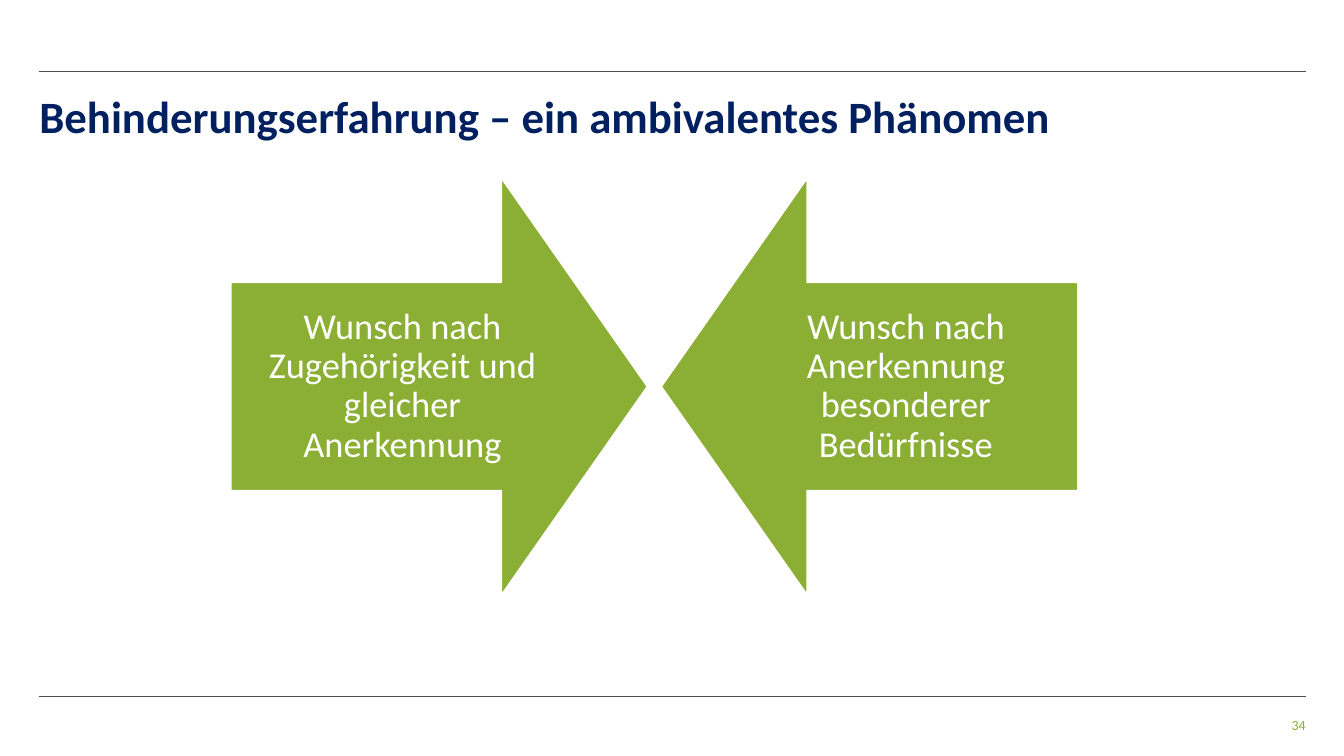
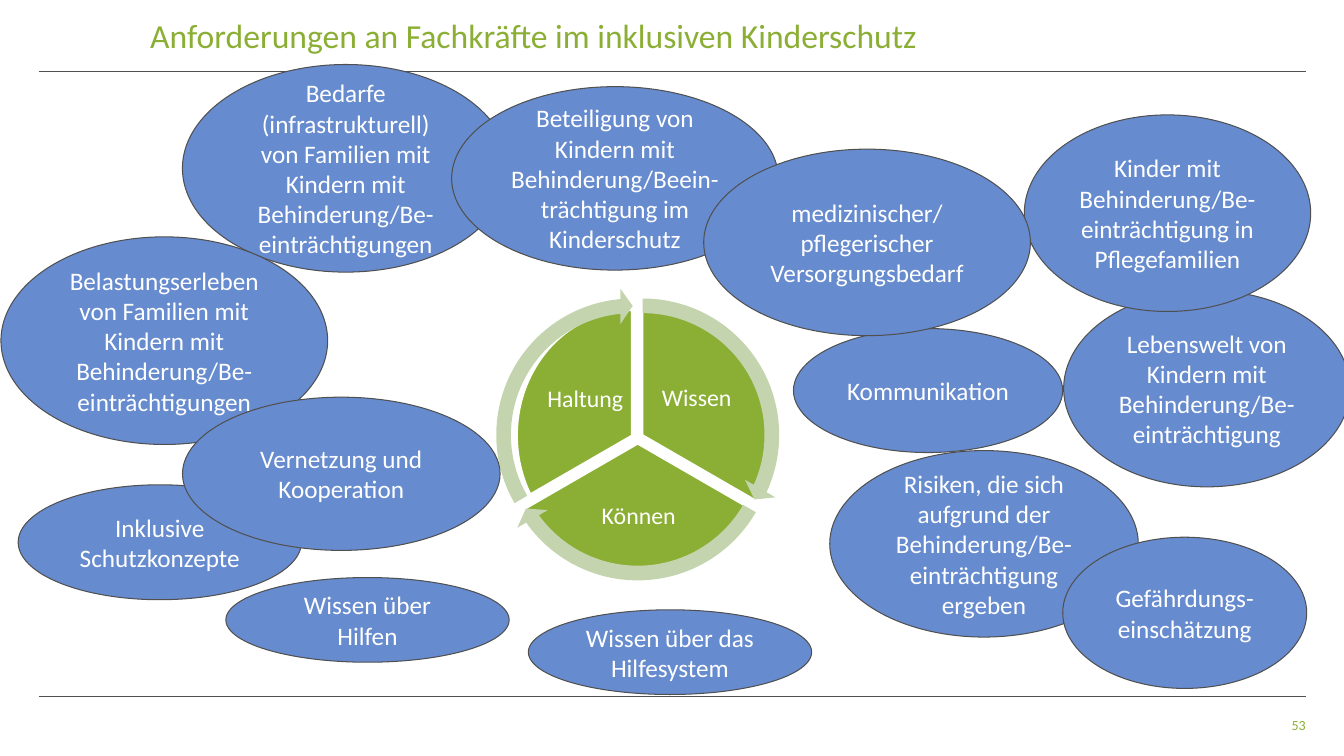
from lxml import etree
from pptx import Presentation
from pptx.dml.color import RGBColor
from pptx.enum.shapes import MSO_CONNECTOR, MSO_SHAPE
from pptx.enum.text import MSO_ANCHOR, PP_ALIGN
from pptx.oxml.ns import qn
from pptx.util import Inches, Pt

STRAIGHT = MSO_CONNECTOR.STRAIGHT
OVAL, PIE, RING_ARROW = MSO_SHAPE.OVAL, MSO_SHAPE.PIE, MSO_SHAPE.CIRCULAR_ARROW
RIGHT_ARROW, LEFT_ARROW = MSO_SHAPE.RIGHT_ARROW, MSO_SHAPE.LEFT_ARROW
MIDDLE, BOTTOM = MSO_ANCHOR.MIDDLE, MSO_ANCHOR.BOTTOM
LEFT, CENTER, RIGHT = PP_ALIGN.LEFT, PP_ALIGN.CENTER, PP_ALIGN.RIGHT

GREEN, PALE_GREEN, BLUE = "8BAF35", "C4D4AE", "668BCE"
NAVY, GREY, WHITE = "002060", "505050", "FFFFFF"
MARGIN, CONTENT_W = 0.39, 12.56


def rgb(value):
    return RGBColor.from_string(value)


class Deck:
    """Holds the shared style and the current slide."""

    font = "Calibri"

    def __init__(self):
        self.prs = Presentation()
        self.prs.slide_width, self.prs.slide_height = Inches(13.33), Inches(7.5)

    def slide(self, number):
        self.s = self.prs.slides.add_slide(self.prs.slide_layouts[6])
        for y in (0.71, 6.91):
            self.rule(y)
        self.text((11.97, 7.13, 0.98, 0.15), number, 10, GREEN, align=RIGHT, anchor=BOTTOM)

    def rule(self, y):
        x1, x2, y = Inches(MARGIN), Inches(MARGIN + CONTENT_W), Inches(y)
        line = self.s.shapes.add_connector(STRAIGHT, x1, y, x2, y)
        line.line.color.rgb, line.line.width = rgb(GREY), Pt(0.5)
        etree.SubElement(line._element.spPr, qn("a:effectLst"))

    def title(self, box, text, size, color, bold=False):
        self.text(box, text, size, color, bold=bold)

    def text(self, box, text, size, color, **options):
        sp = self.s.shapes.add_textbox(*map(Inches, box))
        self.fill_text(sp, text, size, color, **options)

    def shape(self, kind, box, fill, line=None, width=1, adjust=()):
        sp = self.s.shapes.add_shape(kind, *map(Inches, box))
        sp.shadow.inherit = False
        sp.fill.solid()
        sp.fill.fore_color.rgb = rgb(fill)
        if line:
            sp.line.color.rgb, sp.line.width = rgb(line), Pt(width)
        else:
            sp.line.fill.background()
        for i, value in enumerate(adjust):
            sp.adjustments[i] = value
        return sp

    def bubble(self, box, text):
        sp = self.shape(OVAL, box, BLUE, GREY, 0.75)
        self.fill_text(sp, text, 18, WHITE, align=CENTER, inset=(0.1, 0.05), spacing=1)

    def fill_text(self, sp, text, size, color, bold=False, align=LEFT, anchor=MIDDLE,
                  inset=(0, 0), spacing=0.9):
        tf = sp.text_frame
        dx, dy = map(Inches, inset)
        frame = {"word_wrap": True, "vertical_anchor": anchor, "margin_left": dx,
                 "margin_right": dx, "margin_top": dy, "margin_bottom": dy}
        for name, value in frame.items():
            setattr(tf, name, value)
        p = tf.paragraphs[0]
        p.text, p.alignment, p.line_spacing = text, align, spacing
        for r in p.runs:
            for name, value in {"name": self.font, "size": Pt(size), "bold": bold}.items():
                setattr(r.font, name, value)
            r.font.color.rgb = rgb(color)


def ambivalence(deck):
    deck.slide("34")
    deck.title((MARGIN, 0.82, CONTENT_W, 0.73),
               "Behinderungserfahrung – ein ambivalentes Phänomen", 32, NAVY, bold=True)

    # Two arrows meeting in the middle
    side = 4.13
    for kind, x, text in (
        (RIGHT_ARROW, 2.29, "Wunsch nach Zugehörigkeit und gleicher Anerkennung"),
        (LEFT_ARROW, 6.56, "Wunsch nach Anerkennung besonderer Bedürfnisse"),
    ):
        sp = deck.shape(kind, (x, 1.77, side, side), GREEN, WHITE, adjust=(0.5, 0.35))
        deck.fill_text(sp, text, 26, WHITE, align=CENTER, inset=(0.2, 0.2))


def requirements(deck):
    deck.slide("53")
    deck.title((1.49, 0.19, 7.85, 0.36),
               "Anforderungen an Fachkräfte im inklusiven Kinderschutz", 24, GREEN)

    # Cycle: three sectors with labels, then the arrows around them
    for box, angles, label_box, label in (
        ((5.08, 3.02, 2.59, 2.59), (162, 18), (6.45, 3.57, 0.92, 0.77), "Wissen"),
        ((5.03, 3.11, 2.59, 2.59), (18, 90), (5.64, 4.79, 1.39, 0.68), "Können"),
        ((5.13, 3.08, 2.27, 2.48), (90, 162), (5.4, 3.6, 0.81, 0.74), "Haltung"),
    ):
        deck.shape(PIE, box, GREEN, WHITE, adjust=angles)
        deck.text(label_box, label, 17, WHITE, align=CENTER, inset=(0.02, 0.02))
    ring = 2.91
    for x, y, end, start in ((4.92, 2.86, 14.73, 162), (4.87, 2.95, 86.72, 18),
                             (4.82, 2.86, 158.73, 90)):
        deck.shape(RING_ARROW, (x, y, ring, ring), PALE_GREEN,
                   adjust=(0.05, 3.28, end, start, 0.06))

    # Topic bubbles, from back to front
    for box, text in (
        ((10.55, 2.88, 2.84, 1.95), "Lebenswelt von Kindern mit Behinderung/Be-einträchtigung"),
        ((1.81, 0.64, 3.24, 2.06), "Bedarfe (infrastrukturell)\vvon Familien mit Kindern mit "
                                   "Behinderung/Be-einträchtigungen"),
        ((8.23, 4.47, 3.06, 1.85), "Risiken, die sich aufgrund der "
                                   "Behinderung/Be-einträchtigung ergeben"),
        ((0.01, 2.35, 3.24, 2.06), "Belastungserleben\vvon Familien mit Kindern mit "
                                   "Behinderung/Be-einträchtigungen"),
        ((10.16, 1.14, 2.84, 1.95), "Kinder mit Behinderung/Be-einträchtigung in Pflegefamilien"),
        ((4.48, 0.86, 3.24, 1.82), "Beteiligung von Kindern mit "
                                   "Behinderung/Beein-trächtigung im Kinderschutz"),
        ((0.18, 4.81, 2.81, 1.14), "Inklusive Schutzkonzepte"),
        ((10.54, 5.33, 2.42, 1.5), "Gefährdungs-einschätzung"),
        ((2.24, 5.73, 2.81, 0.84), "Wissen über Hilfen"),
        ((5.24, 6.05, 2.81, 0.84), "Wissen über das Hilfesystem"),
        ((7.87, 3.26, 2.67, 1.23), "Kommunikation"),
        ((6.98, 1.48, 3.24, 1.85), "medizinischer/ pflegerischer Versorgungsbedarf"),
        ((1.81, 3.94, 3.15, 1.52), "Vernetzung und Kooperation"),
    ):
        deck.bubble(box, text)


def main():
    deck = Deck()
    ambivalence(deck)
    requirements(deck)
    deck.prs.save("out.pptx")


if __name__ == "__main__":
    main()
